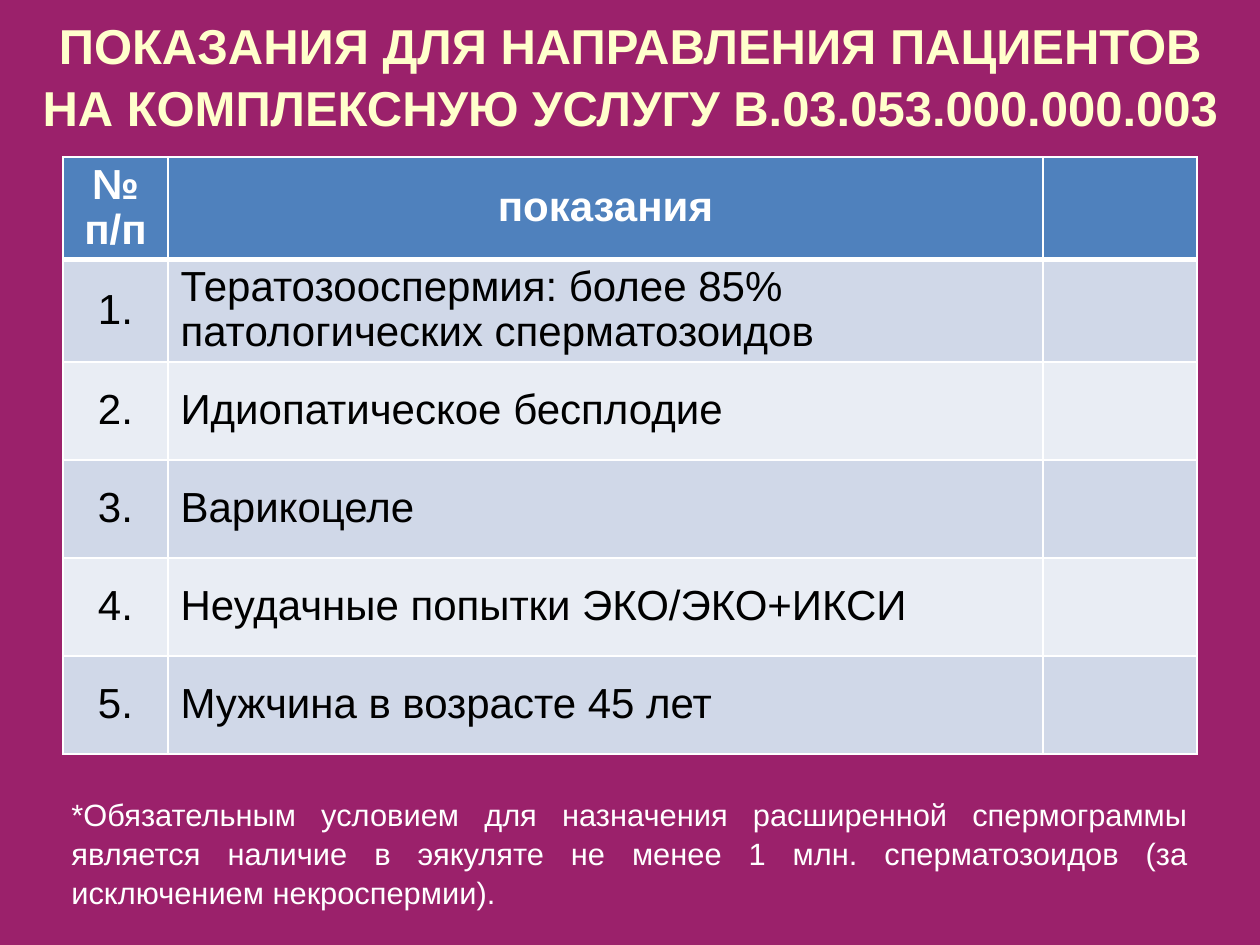
from lxml import etree
from pptx import Presentation
from pptx import util as u
from pptx.dml.color import RGBColor
from pptx.enum import text
from pptx.oxml.ns import qn

PX = 914400 / 126
FONT = "Arial"
WHITE, BLACK, CREAM = "FFFFFF", "000000", "FFFFCC"
PLUM, HEAD, BANDS = "9B216B", "4F81BD", ("D0D8E8", "E9EDF4")

TITLE = "ПОКАЗАНИЯ ДЛЯ НАПРАВЛЕНИЯ ПАЦИЕНТОВ НА КОМПЛЕКСНУЮ УСЛУГУ В.03.053.000.000.003"
INDICATIONS = [
    "Тератозооспермия: более 85% патологических сперматозоидов",
    "Идиопатическое бесплодие",
    "Варикоцеле",
    "Неудачные попытки ЭКО/ЭКО+ИКСИ",
    "Мужчина в возрасте 45 лет",
]
NOTE = ("*Обязательным условием для назначения расширенной спермограммы является наличие "
        "в эякуляте не менее 1 млн. сперматозоидов (за исключением некроспермии).")


def px(n):
    return u.Emu(round(n * PX))


def rgb(color):
    return RGBColor.from_string(color)


def write(tf, words, size, color, align, bold=False, spacing=1.0):
    p = tf.paragraphs[0]
    p.text = words
    p.alignment = align
    p.line_spacing = spacing
    p.font.name, p.font.size, p.font.bold = FONT, u.Pt(size), bold
    p.font.color.rgb = rgb(color)
    return p


def set_borders(cell, bottom=1):
    """Put white lines round a cell, before its fill as the schema asks."""
    tcPr = cell._tc.get_or_add_tcPr()
    for i, (side, width) in enumerate(dict(L=1, R=1, T=1, B=bottom).items()):
        ln = etree.Element(qn(f"a:ln{side}"), w=str(u.Pt(width)))
        fill = etree.SubElement(ln, qn("a:solidFill"))
        etree.SubElement(fill, qn("a:srgbClr"), val=WHITE)
        tcPr.insert(i, ln)


def add_title(s, x, y, w, h):
    sp = s.shapes.title
    sp.left, sp.top, sp.width, sp.height = map(px, (x, y, w, h))
    tf = sp.text_frame
    tf.word_wrap = True
    tf.auto_size = text.MSO_AUTO_SIZE.NONE
    tf.vertical_anchor = text.MSO_ANCHOR.MIDDLE
    write(tf, TITLE, 28, CREAM, text.PP_ALIGN.CENTER, bold=True, spacing=1.05)


def add_indications(s, x, y, widths, row_h):
    rows = [("№ п/п", "показания", "")]
    rows += [(f"{n}.", words, "") for n, words in enumerate(INDICATIONS, 1)]
    table = s.shapes.add_table(len(rows), len(widths), px(x), px(y),
                               px(sum(widths)), px(row_h * len(rows))).table
    for col, width in zip(table.columns, widths):
        col.width = px(width)
    for r, row in enumerate(rows):
        table.rows[r].height = px(row_h)
        header = r == 0
        for c, words in enumerate(row):
            cell = table.cell(r, c)
            cell.vertical_anchor = text.MSO_ANCHOR.MIDDLE
            cell.fill.solid()
            cell.fill.fore_color.rgb = rgb(HEAD if header else BANDS[(r - 1) % 2])
            # The header and the row below it share one thick line
            set_borders(cell, bottom=3 if header else 1)
            centred = header or c == 0
            write(cell.text_frame, words, 24, WHITE if header else BLACK,
                  text.PP_ALIGN.CENTER if centred else text.PP_ALIGN.LEFT,
                  bold=header, spacing=0.96)


def add_note(s, x, y, w, h):
    tf = s.shapes.add_textbox(*map(px, (x, y, w, h))).text_frame
    tf.word_wrap = True
    p = write(tf, NOTE, 17.6, WHITE, text.PP_ALIGN.JUSTIFY, spacing=1.05)
    p.space_after = u.Pt(12)


def main():
    prs = Presentation()
    prs.slide_width, prs.slide_height = px(1260), px(945)
    s = prs.slides.add_slide(prs.slide_layouts[5])
    s.background.fill.solid()
    s.background.fill.fore_color.rgb = rgb(PLUM)
    add_title(s, 10, 0, 1240, 149)
    add_indications(s, 63, 157, (105, 875, 154), 98)
    add_note(s, 59, 788, 1142, 134)
    prs.save("out.pptx")


if __name__ == "__main__":
    main()
